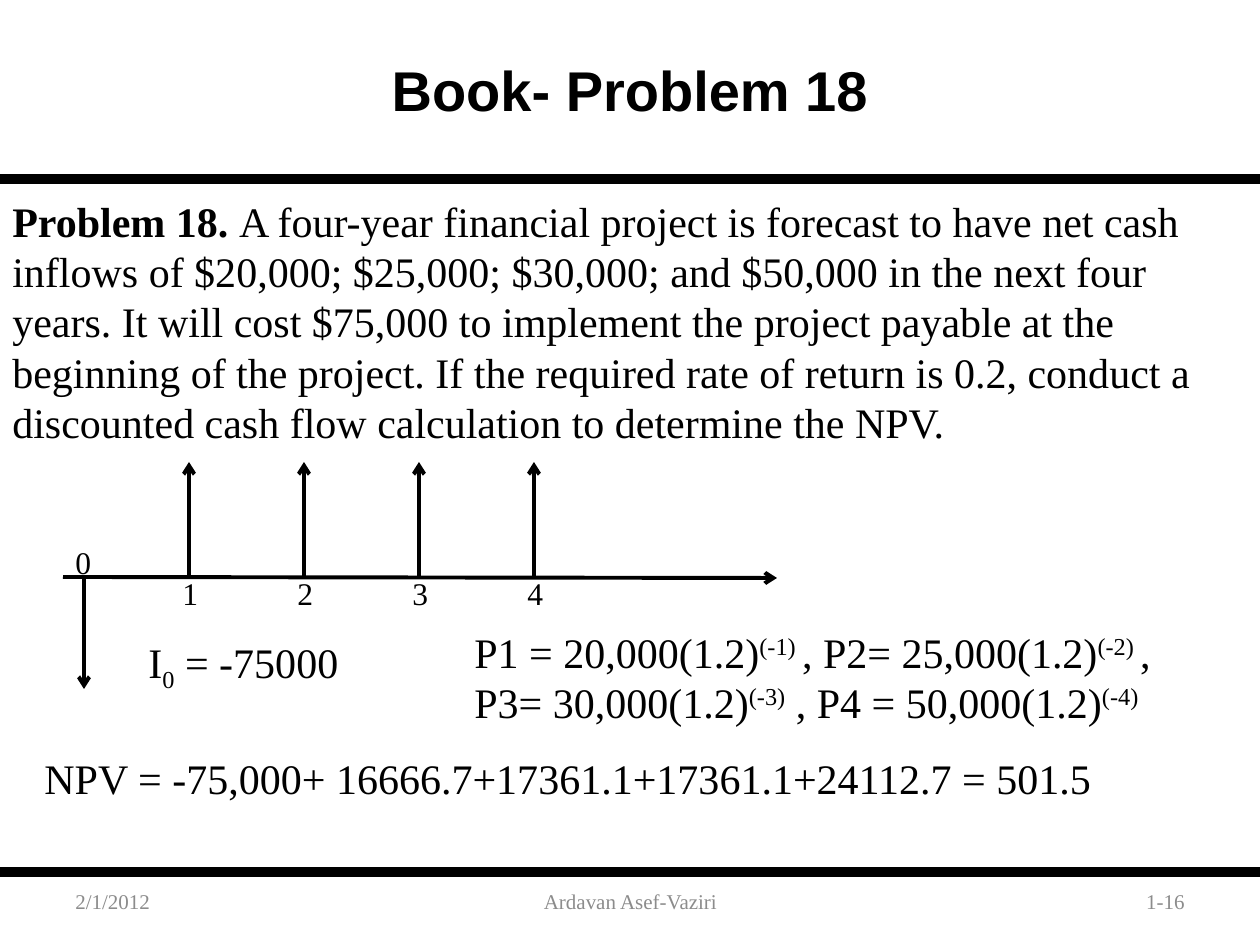
from lxml import etree
from pptx import Presentation
from pptx import util as u
from pptx.dml.color import RGBColor
from pptx.enum import shapes, text
from pptx.oxml.ns import qn

PX = 914400 / 126
BLACK, GRAY = "000000", "8C8C8C"
SERIF = "Times New Roman"
LEFT, CENTER, RIGHT = text.PP_ALIGN.LEFT, text.PP_ALIGN.CENTER, text.PP_ALIGN.RIGHT


def add_text(left, top, width, height, pieces, size=24, color=BLACK,
             align=LEFT, anchor=text.MSO_ANCHOR.TOP, wrap=True):
    """Add a one-paragraph box; pieces are (text, style) pairs, style "b" or a baseline in percent."""
    box = slide.shapes.add_textbox(*(round(n * PX) for n in (left, top, width, height)))
    frame = box.text_frame
    frame.word_wrap = wrap
    frame.vertical_anchor = anchor
    para = frame.paragraphs[0]
    para.alignment = align
    for words, style in pieces:
        span = para.add_run()
        span.text = words
        span.font.name = SERIF
        span.font.size = u.Pt(size)
        span.font.bold = style == "b"
        span.font.color.rgb = RGBColor.from_string(color)
        if isinstance(style, int):
            span.font._element.set("baseline", str(style * 1000))


def add_line(x1, y1, x2, y2, weight=2.25, arrow=True):
    line = slide.shapes.add_connector(shapes.MSO_CONNECTOR.STRAIGHT,
                                      *(round(n * PX) for n in (x1, y1, x2, y2)))
    line.line.width = u.Pt(weight)
    line.line.color.rgb = RGBColor.from_string(BLACK)
    if arrow:
        etree.SubElement(line.line._get_or_add_ln(), qn("a:tailEnd"), type="arrow")
    etree.SubElement(line._element.spPr, qn("a:effectLst"))


deck = Presentation()
deck.slide_width, deck.slide_height = u.Inches(10), u.Inches(7.5)
slide = deck.slides.add_slide(deck.slide_layouts[5])

# Rules above and below the content
for y in (179, 872):
    add_line(0, y, 1260, y, weight=6, arrow=False)

title = slide.shapes.title
title.left, title.top, title.width, title.height = (round(n * PX) for n in (0, 0, 1260, 179))
title.text_frame.text = "Book- Problem 18"
title.text_frame.vertical_anchor = text.MSO_ANCHOR.MIDDLE
para = title.text_frame.paragraphs[0]
para.alignment = CENTER
font = para.runs[0].font
font.name, font.size, font.bold = "Arial", u.Pt(32), True
font.color.rgb = RGBColor.from_string(BLACK)

# Footer
for left, width, words, align in (
    (63, 294, "2/1/2012", LEFT),
    (431, 399, "Ardavan Asef-Vaziri", CENTER),
    (903, 294, "1-16", RIGHT),
):
    add_text(left, 876, width, 50, [(words, None)], 12, GRAY, align, text.MSO_ANCHOR.MIDDLE)

# Problem statement
add_text(0, 189, 1260, 267, [
    ("Problem 18. ", "b"),
    ("A four-year financial project is forecast to have net cash inflows of $20,000; "
     "$25,000; $30,000; and $50,000 in the next four years. It will cost $75,000 to "
     "implement the project payable at the beginning of the project. If the required "
     "rate of return is 0.2, conduct a discounted cash flow calculation to determine "
     "the NPV.", None),
])

# Cash flow timeline: the outlay points down, yearly inflows point up
AXIS_Y = 577
add_line(63, AXIS_Y, 777, AXIS_Y + 1)
add_line(84, AXIS_Y, 84, 689)
add_text(63, 537, 42, 50, [("0", None)], 18, wrap=False)
for year in range(1, 5):
    x = 189 + 115 * (year - 1)
    add_line(x, AXIS_Y, x, 462)
    add_text(x - 19, 568, 42, 50, [(str(year), None)], 18, wrap=False)

# Present values and result
add_text(136, 630, 219, 64, [("I", None), ("0", -25), (" = -75000", None)], wrap=False)
add_text(462, 620, 725, 115, [
    ("P1 = 20,000(1.2)", None), ("(-1) ", 30),
    (", P2= 25,000(1.2)", None), ("(-2) ", 30),
    (", P3= 30,000(1.2)", None), ("(-3)", 30),
    (" , P4 = 50,000(1.2)", None), ("(-4)", 30),
])
add_text(32, 746, 1228, 64,
         [("NPV = -75,000+ 16666.7+17361.1+17361.1+24112.7 = 501.5", None)])

deck.save("out.pptx")
